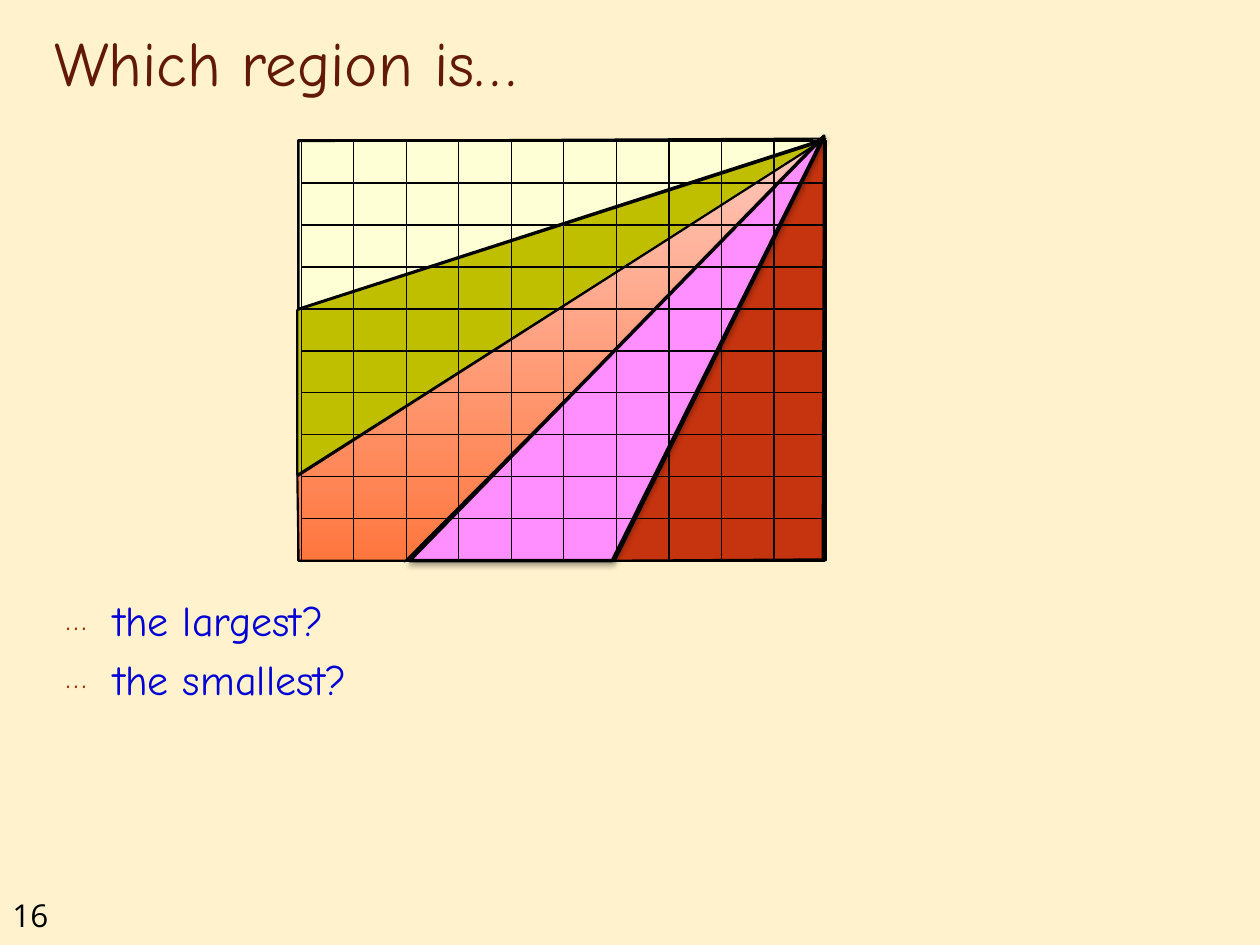
from lxml import etree
from pptx import Presentation
from pptx import util as u
from pptx.dml.color import RGBColor
from pptx.enum import shapes, text
from pptx.oxml.ns import qn

Inches = u.Inches
COLORS = {
    "background": "FFF2CC", "title": "631908", "answer": "0000D4",
    "bullet": "993300", "ink": "000000", "ray": "6699FF",
    "cream": "FFFFD6", "olive": "BFBF00", "orange": "FF773F",
    "peach": "FFC8BC", "red": "C6330F", "pink": "FF8FFF",
}
FONT = "Comic Neue"
COUNT = 10
BOARD = (2.37, 1.12, 4.17, 3.33)

# Fill, line width and corners, measured from the top left of the board.
REGIONS = [
    (["cream"], 1.25, [(0, 0), (4.18, -0.02), (0, 1.33)]),
    (["olive"], 1.25, [(-0.01, 1.34), (-0.01, 2.65), (4.16, 0)]),
    (["orange", "peach"], 1.25,
     [(-0.01, 2.66), (0, 3.33), (0.85, 3.33), (4.18, -0.02)]),
    (["red"], 1.25, [(2.51, 3.33), (4.17, -0.02), (4.16, 3.32)]),
    (["pink"], 2, [(4.17, -0.04), (0.88, 3.33), (2.49, 3.33)]),
]
RAY_ENDS = [(2.5, 3.34), (0.83, 3.34), (0, 2.67), (0, 1.34)]


def color(name):
    return RGBColor.from_string(COLORS[name])


def add_span(para, words, size, font, tint):
    span = para.add_run()
    span.text = words
    span.font.size = u.Pt(size)
    span.font.name = font
    span.font.color.rgb = color(tint)


def place(holder, box):
    holder.left, holder.top, holder.width, holder.height = map(Inches, box)
    holder.text_frame.auto_size = text.MSO_AUTO_SIZE.NONE
    holder.text_frame.word_wrap = True


def set_line(shape, tint, width):
    shape.line.color.rgb = color(tint)
    shape.line.width = u.Pt(width)


def add_outline(group, box, width):
    cell = group.shapes.add_shape(shapes.MSO_SHAPE.RECTANGLE, *map(Inches, box))
    cell.shadow.inherit = False
    cell.fill.background()
    set_line(cell, "ink", width)


def add_title(page, box):
    title = page.shapes.title
    place(title, box)
    title.text_frame.vertical_anchor = text.MSO_ANCHOR.BOTTOM
    para = title.text_frame.paragraphs[0]
    para.alignment = text.PP_ALIGN.LEFT
    add_span(para, "Which region is…", 36, FONT, "title")


def add_bullet(para):
    """Give the paragraph a hanging ellipsis as its bullet."""
    props = para._p.get_or_add_pPr()
    props.set("marL", str(Inches(0.38)))
    props.set("indent", str(Inches(-0.38)))
    tint = etree.SubElement(props, qn("a:buClr"))
    etree.SubElement(tint, qn("a:srgbClr"), val=COLORS["bullet"])
    etree.SubElement(props, qn("a:buSzPct"), val="75000")
    etree.SubElement(props, qn("a:buFont"), typeface=FONT)
    etree.SubElement(props, qn("a:buChar"), char="…")


def add_questions(page, box):
    body = page.placeholders[1]
    place(body, box)
    frame = body.text_frame
    for number, words in enumerate(["the largest?", "the smallest?"]):
        para = frame.add_paragraph() if number else frame.paragraphs[0]
        add_bullet(para)
        add_span(para, words, 24, FONT, "answer")


def add_rays(page, box):
    """Draw the framed board with lines fanning out of its top right corner."""
    left, top, width, _ = box
    group = page.shapes.add_group_shape()
    for across, down in RAY_ENDS:
        ray = group.shapes.add_connector(
            shapes.MSO_CONNECTOR.STRAIGHT, Inches(left + width), Inches(top),
            Inches(left + across), Inches(top + down))
        set_line(ray, "ray", 2)
        etree.SubElement(ray._element.spPr, qn("a:effectLst"))
    add_outline(group, box, 2)


def add_soft_shadow(shape):
    effects = shape._element.spPr.find(qn("a:effectLst"))
    shadow = etree.SubElement(
        effects, qn("a:outerShdw"), blurRad=str(u.Pt(3.1)),
        dist=str(u.Pt(1.8)), dir="5400000", rotWithShape="0")
    tint = etree.SubElement(shadow, qn("a:srgbClr"), val=COLORS["ink"])
    etree.SubElement(tint, qn("a:alpha"), val="35000")


def add_regions(page, box):
    left, top = box[:2]
    for tints, width, corners in REGIONS:
        points = [(Inches(left + x), Inches(top + y)) for x, y in corners]
        builder = page.shapes.build_freeform(*points[0])
        builder.add_line_segments(points[1:], close=True)
        region = builder.convert_to_shape()
        region.shadow.inherit = False
        set_line(region, "ink", width)
        if len(tints) > 1:
            region.fill.gradient()
            region.fill.gradient_angle = 90
            for stop, tint in zip(region.fill.gradient_stops, tints):
                stop.color.rgb = color(tint)
        else:
            region.fill.solid()
            region.fill.fore_color.rgb = color(tints[0])
    add_soft_shadow(region)


def add_grid(page, box):
    left, top, width, height = box
    wide, high = width / COUNT, height / COUNT
    group = page.shapes.add_group_shape()
    for row in reversed(range(COUNT)):
        for column in range(COUNT):
            add_outline(group, (left + column * wide, top + row * high,
                                wide, high), 0.75)


def add_page_number(page, box):
    number = page.shapes.add_textbox(*map(Inches, box))
    number.text_frame.word_wrap = True
    add_span(number.text_frame.paragraphs[0], "16", 18, "Open Sans", "ink")


def main():
    deck = Presentation()
    deck.slide_width, deck.slide_height = Inches(10), Inches(7.5)
    page = deck.slides.add_slide(deck.slide_layouts[1])
    page.background.fill.solid()
    page.background.fill.fore_color.rgb = color("background")
    add_title(page, (0.33, 0.17, 8.5, 0.67))
    add_questions(page, (0.42, 4.67, 3.92, 1.75))
    add_rays(page, BOARD)
    add_regions(page, BOARD)
    add_grid(page, (2.39, *BOARD[1:]))
    add_page_number(page, (0, 7.06, 0.75, 0.4))
    deck.save("out.pptx")


if __name__ == "__main__":
    main()
